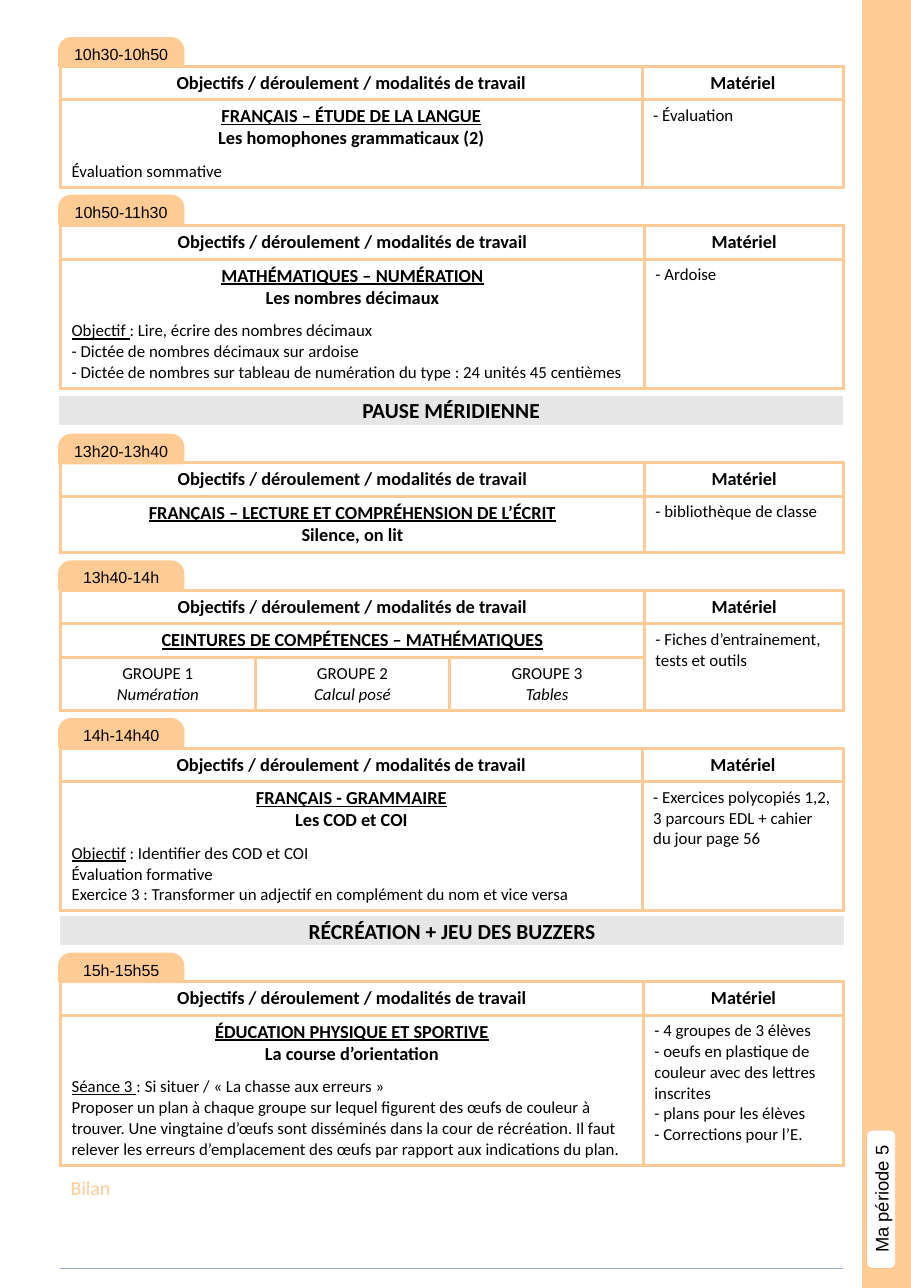
"""Build a one-page daily class planner with timed lesson tables."""
from lxml.etree import SubElement
from pptx import Presentation
from pptx.dml.color import RGBColor
from pptx.enum.shapes import MSO_SHAPE as SHAPE
from pptx.enum.text import MSO_ANCHOR as ANCHOR, PP_ALIGN as ALIGN
from pptx.oxml.ns import qn
from pptx.util import Inches, Pt

COLORS = {"peach": "FFCB95", "white": "FFFFFF", "grey": "E7E6E6",
          "black": "000000", "rule": "9BADCD"}
LEFT, WIDTH, HEADER = 0.55, 7.11, 0.3
HEADINGS = ["Objectifs / déroulement / modalités de travail", "Matériel"]

prs = Presentation()
prs.slide_width, prs.slide_height = Inches(8.27), Inches(11.69)
s = prs.slides.add_slide(prs.slide_layouts[6])


def write(tf, lines, size=11, bold=False, color="black", font="Calibri", align=ALIGN.LEFT):
    """Fill a text frame; the part of a line before a bar is underlined."""
    tf.text = "\n".join(line.replace("|", "") for line in lines)
    for p, line in zip(tf.paragraphs, lines):
        p.alignment = align
        lead, bar, rest = line.partition("|")
        if bar:
            p.runs[0].text = lead
            p.runs[0].font.underline = True
            if rest:
                p.add_run().text = rest
        for r in p.runs:
            r.font.size, r.font.bold, r.font.name = Pt(size), bold, font
            r.font.color.rgb = RGBColor.from_string(COLORS[color])


def style_cell(cell, sides, color, width):
    """Give a cell a white fill and draw the named border sides."""
    tcPr = cell._tc.get_or_add_tcPr()
    for side in ("lnL", "lnR", "lnT", "lnB"):
        ln = SubElement(tcPr, qn("a:" + side), w=str(Pt(width)))
        if side in sides:
            fill = SubElement(ln, qn("a:solidFill"))
            SubElement(fill, qn("a:srgbClr"), val=COLORS[color])
        else:
            SubElement(ln, qn("a:noFill"))
    cell.fill.solid()
    cell.fill.fore_color.rgb = RGBColor.from_string(COLORS["white"])


lessons = [
    ("10h30-10h50", 0.35, 0.6, 5.28, [0.79],
     ["FRANÇAIS – ÉTUDE DE LA LANGUE|", "Les homophones grammaticaux (2)"],
     ["Évaluation sommative"], ["- Évaluation"]),
    ("10h50-11h30", 1.78, 2.05, 5.3, [1.17],
     ["MATHÉMATIQUES – NUMÉRATION|", "Les nombres décimaux"],
     ["Objectif |: Lire, écrire des nombres décimaux",
      "- Dictée de nombres décimaux sur ardoise",
      "- Dictée de nombres sur tableau de numération du type : 24 unités 45 centièmes"],
     ["- Ardoise"]),
    ("13h20-13h40", 3.95, 4.2, 5.3, [0.5],
     ["FRANÇAIS – LECTURE ET COMPRÉHENSION DE L’ÉCRIT|", "Silence, on lit"],
     [], ["- bibliothèque de classe"]),
    ("13h40-14h", 5.1, 5.36, 5.3, [0.3, 0.48],
     ["CEINTURES DE COMPÉTENCES – MATHÉMATIQUES|"],
     [], ["- Fiches d’entrainement, tests et outils"]),
    ("14h-14h40", 6.53, 6.79, 5.28, [1.17],
     ["FRANÇAIS - GRAMMAIRE|", "Les COD et COI"],
     ["Objectif| : Identifier des COD et COI", "Évaluation formative",
      "Exercice 3 : Transformer un adjectif en complément du nom et vice versa"],
     ["- Exercices polycopiés 1,2, 3 parcours EDL + cahier du jour page 56"]),
    ("15h-15h55", 8.66, 8.91, 5.29, [1.36],
     ["ÉDUCATION PHYSIQUE ET SPORTIVE|", "La course d’orientation"],
     ["Séance 3 |: Si situer / « La chasse aux erreurs »",
      "Proposer un plan à chaque groupe sur lequel figurent des œufs de couleur à "
      "trouver. Une vingtaine d’œufs sont disséminés dans la cour de récréation. Il faut "
      "relever les erreurs d’emplacement des œufs par rapport aux indications du plan."],
     ["- 4 groupes de 3 élèves", "- oeufs en plastique de couleur avec des lettres inscrites",
      "- plans pour les élèves", "- Corrections pour l’E."]),
]
groups = [("GROUPE 1", "Numération"), ("GROUPE 2", "Calcul posé"), ("GROUPE 3", "Tables")]

for hours, tab_top, top, main_width, body_heights, titles, steps, material in lessons:
    split = len(body_heights) > 1
    main_cols = len(groups) if split else 1
    heights = [HEADER] + body_heights
    table = s.shapes.add_table(len(heights), main_cols + 1, Inches(LEFT), Inches(top),
                               Inches(WIDTH), Inches(sum(heights))).table
    table.first_row = table.horz_banding = False
    for row, height in zip(table.rows, heights):
        row.height = Inches(height)
    for i in range(main_cols):
        table.columns[i].width = Inches(main_width / main_cols)
    table.columns[main_cols].width = Inches(WIDTH - main_width)
    for cell in table.iter_cells():
        style_cell(cell, ("lnL", "lnR", "lnT", "lnB"), "peach", 2.25)
        cell.vertical_anchor = ANCHOR.MIDDLE
    if split:
        for i in (0, 1):
            table.cell(i, 0).merge(table.cell(i, main_cols - 1))
        table.cell(1, main_cols).merge(table.cell(2, main_cols))
        for i, group in enumerate(groups):
            tf = table.cell(2, i).text_frame
            write(tf, group, align=ALIGN.CENTER)
            tf.paragraphs[1].runs[0].font.italic = True
    for col, heading in zip((0, main_cols), HEADINGS):
        write(table.cell(0, col).text_frame, [heading], 12, True, align=ALIGN.CENTER)

    tf = table.cell(1, 0).text_frame
    write(tf, titles + steps)
    for p in tf.paragraphs[:len(titles)]:
        p.alignment = ALIGN.CENTER
        for r in p.runs:
            r.font.size, r.font.bold = Pt(12), True
    if steps:
        tf.paragraphs[len(titles)].space_before = Pt(7.3)
    table.cell(1, main_cols).vertical_anchor = ANCHOR.TOP
    write(table.cell(1, main_cols).text_frame, material)

tabs = [(SHAPE.ROUND_2_SAME_RECTANGLE, 0.54, lesson[1], 1.12, 0.25, "peach", 2,
         lesson[0], 10.5, "Arial") for lesson in lessons]
blocks = tabs + [
    (SHAPE.RECTANGLE, 0.54, 3.6, WIDTH, 0.25, "grey", 1, "PAUSE MÉRIDIENNE", 14, "Calibri"),
    (SHAPE.RECTANGLE, 0.55, 8.32, WIDTH, 0.25, "grey", 1,
     "RÉCRÉATION + JEU DES BUZZERS", 14, "Calibri"),
    (SHAPE.RECTANGLE, 7.83, 0, 0.43, 11.69, "peach", 1, "", 12, "Arial"),
    (SHAPE.ROUNDED_RECTANGLE, 7.88, 10.27, 0.24, 1.23, "white", 1, "Ma période 5", 12, "Arial"),
]
for kind, left, top, width, height, color, line_width, text, size, font in blocks:
    sp = s.shapes.add_shape(kind, Inches(left), Inches(top), Inches(width), Inches(height))
    sp.shadow.inherit = False
    sp.fill.solid()
    sp.fill.fore_color.rgb = sp.line.color.rgb = RGBColor.from_string(COLORS[color])
    sp.line.width = Pt(line_width)
    if kind == SHAPE.ROUND_2_SAME_RECTANGLE:
        sp.adjustments[0] = 0.43
    tf = sp.text_frame
    tf.margin_left = tf.margin_right = tf.margin_top = tf.margin_bottom = 0
    tf.vertical_anchor = ANCHOR.MIDDLE
    if kind == SHAPE.ROUNDED_RECTANGLE:
        tf._txBody.bodyPr.set("vert", "vert270")
    if text:
        write(tf, [text], size, color == "grey", font=font, align=ALIGN.CENTER)

summary = s.shapes.add_table(3, 2, Inches(0.54), Inches(10.63),
                             Inches(WIDTH), Inches(0.88)).table
summary.first_row = summary.horz_banding = False
for row, height in zip(summary.rows, (0.32, 0.28, 0.28)):
    row.height = Inches(height)
for cell in summary.iter_cells():
    style_cell(cell, ("lnB",), "rule", 1)
    SubElement(cell.text_frame.paragraphs[0]._p, qn("a:endParaRPr"), sz="1000")
for i in (1, 2):
    summary.cell(i, 0).merge(summary.cell(i, 1))
write(summary.cell(0, 0).text_frame, ["Bilan"], 13, color="peach")

prs.save("out.pptx")
